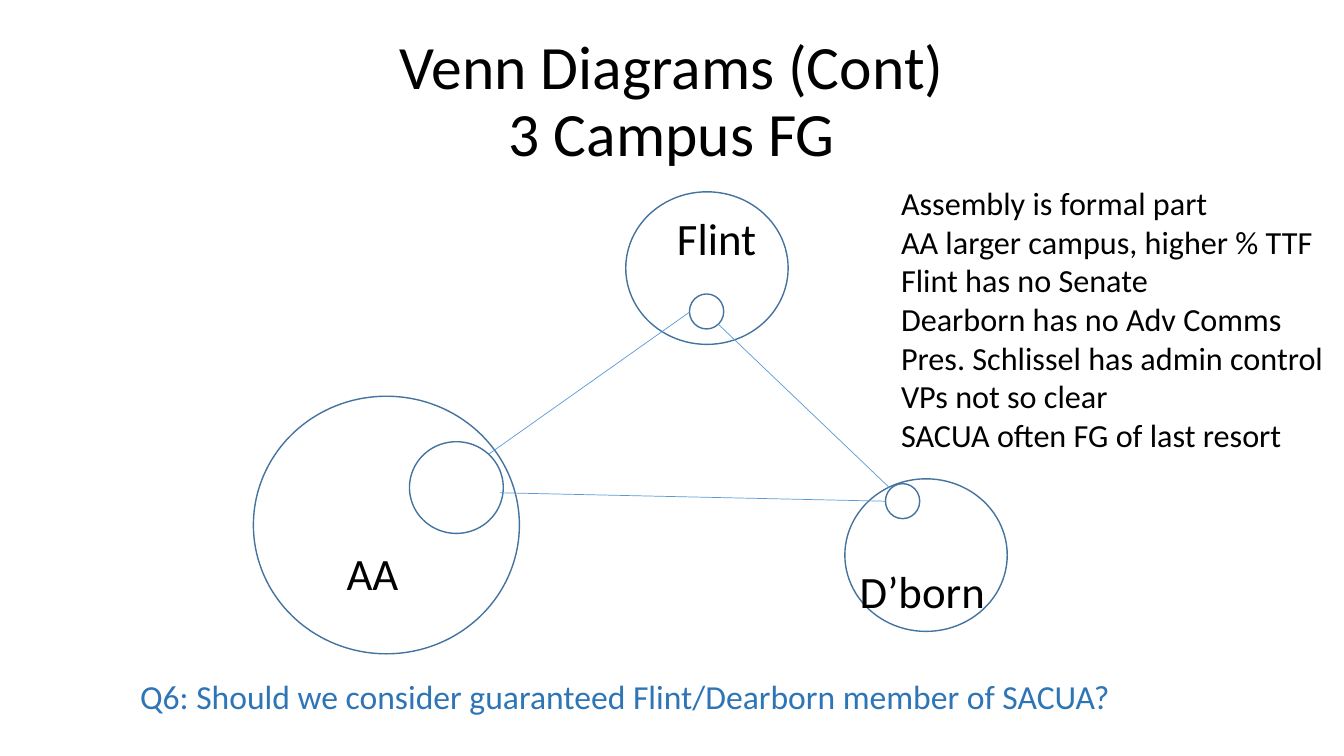
from lxml.etree import SubElement
from pptx import Presentation
from pptx.dml.color import RGBColor
from pptx.enum.shapes import MSO_CONNECTOR as CONN, MSO_SHAPE as SHAPE
from pptx.enum.text import MSO_ANCHOR as ANCHOR, PP_ALIGN as ALIGN
from pptx.oxml.ns import qn
from pptx.util import Pt

COLORS = {"text": "000000", "question": "2E75B6", "circle": "43739E", "link": "5B9BD5"}
NOTES = [
    "Assembly is formal part",
    "AA larger campus, higher % TTF",
    "Flint has no Senate",
    "Dearborn has no Adv Comms",
    "Pres. Schlissel has admin control",
    "VPs not so clear",
    "SACUA often FG of last resort",
]
CAMPUSES = [
    ("AA", (181, 283, 190, 184), (111.5, 32.5, 67, 65.5), (59.5, 103.5, 52, 46)),
    ("Flint", (447, 137, 116, 109), (45.5, 73, 24.5, 25), (29.5, 10, 72, 46)),
    ("D’born", (603.5, 342, 116, 109), (29, 3.5, 24.5, 25), (3.5, 57, 104, 46)),
]
LINKS = [
    ((513.5, 232), (636, 349)),
    ((357, 352), (632, 358)),
    ((349, 324.5), (492.5, 223)),
]


def rgb(name):
    """Return the named palette colour."""
    return RGBColor.from_string(COLORS[name])


def write(tf, lines, size=32, color="text", align=ALIGN.LEFT, spacing=1.0):
    """Fill a text frame with one formatted paragraph per line."""
    for i, line in enumerate(lines):
        p = tf.add_paragraph() if i else tf.paragraphs[0]
        p.text, p.alignment, p.line_spacing = line, align, spacing
        for r in p.runs:
            r.font.name, r.font.size = "Calibri", Pt(size)
            r.font.color.rgb = rgb(color)


def add_title(s, box, text):
    """Place and format the title placeholder."""
    sp = s.shapes.title
    sp.left, sp.top, sp.width, sp.height = map(Pt, box)
    sp.text_frame.vertical_anchor = ANCHOR.MIDDLE
    write(sp.text_frame, [text], size=44, align=ALIGN.CENTER, spacing=0.9)


def add_text(s, box, lines, **fmt):
    """Add an unwrapped text box."""
    tf = s.shapes.add_textbox(*map(Pt, box)).text_frame
    tf.word_wrap = False
    write(tf, lines, **fmt)


def add_circle(s, box):
    """Add an unfilled outlined ellipse."""
    sp = s.shapes.add_shape(SHAPE.OVAL, *map(Pt, box))
    sp.shadow.inherit = False
    sp.fill.background()
    sp.line.color.rgb, sp.line.width = rgb("circle"), Pt(1)


def add_campus(s, box, name, core, label):
    """Draw a campus circle with its inner circle and name, offset from the box."""
    x, y = box[:2]
    add_circle(s, box)
    add_circle(s, (x + core[0], y + core[1], *core[2:]))
    add_text(s, (x + label[0], y + label[1], *label[2:]), [name])


def add_link(s, start, end):
    """Join two inner circles with a thin line."""
    cx = s.shapes.add_connector(CONN.STRAIGHT, *map(Pt, (*start, *end)))
    cx.line.color.rgb, cx.line.width = rgb("link"), Pt(0.5)
    SubElement(cx._element.spPr, qn("a:effectLst"))


def main():
    """Build and save the slide."""
    prs = Presentation()
    prs.slide_width, prs.slide_height = Pt(960), Pt(540)
    s = prs.slides.add_slide(prs.slide_layouts[5])
    add_title(s, (66, 21.5, 828, 104.5), "Venn Diagrams (Cont)\v3 Campus FG")
    add_text(s, (93, 479.5, 713.5, 36),
             ["Q6: Should we consider guaranteed Flint/Dearborn member of SACUA?"],
             size=24, color="question")
    for name, box, core, label in CAMPUSES:
        add_campus(s, box, name, core, label)
    for start, end in LINKS:
        add_link(s, start, end)
    add_text(s, (636.5, 127.5, 319.5, 202.5), NOTES, size=23)
    prs.save("out.pptx")


if __name__ == "__main__":
    main()
